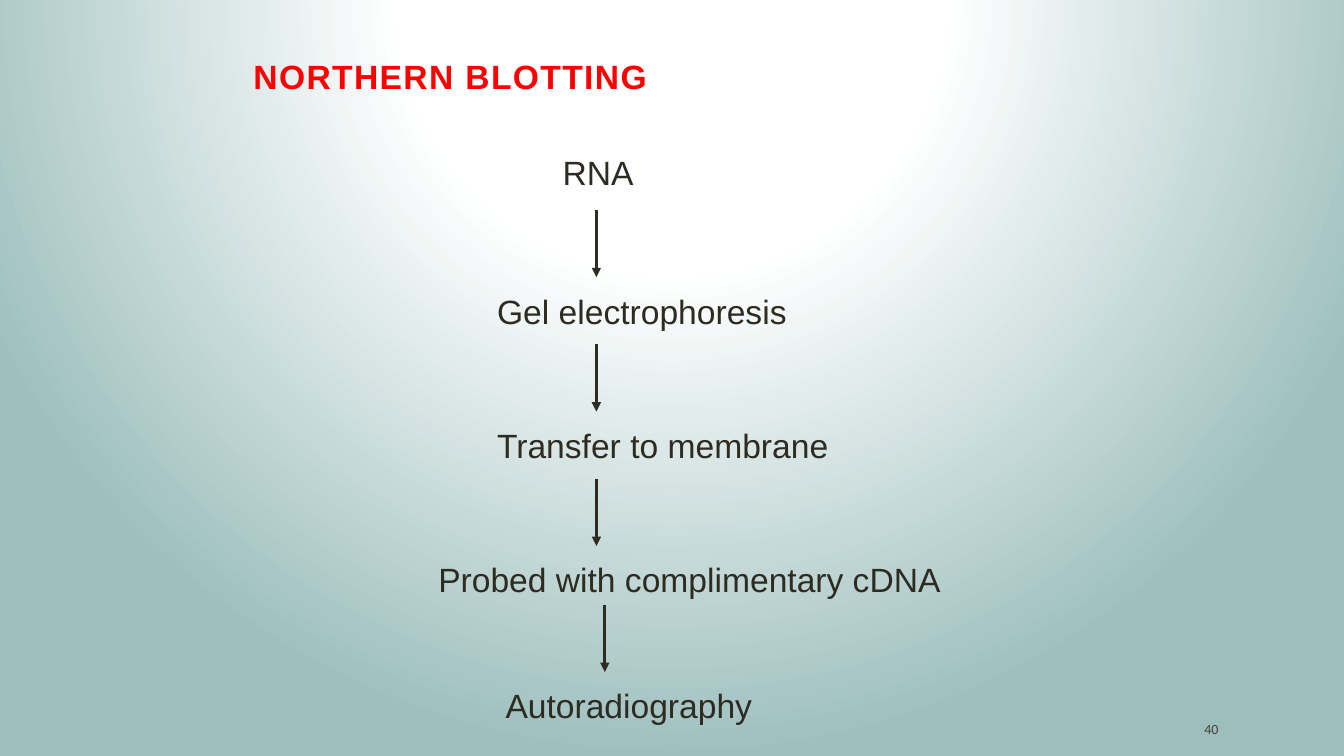
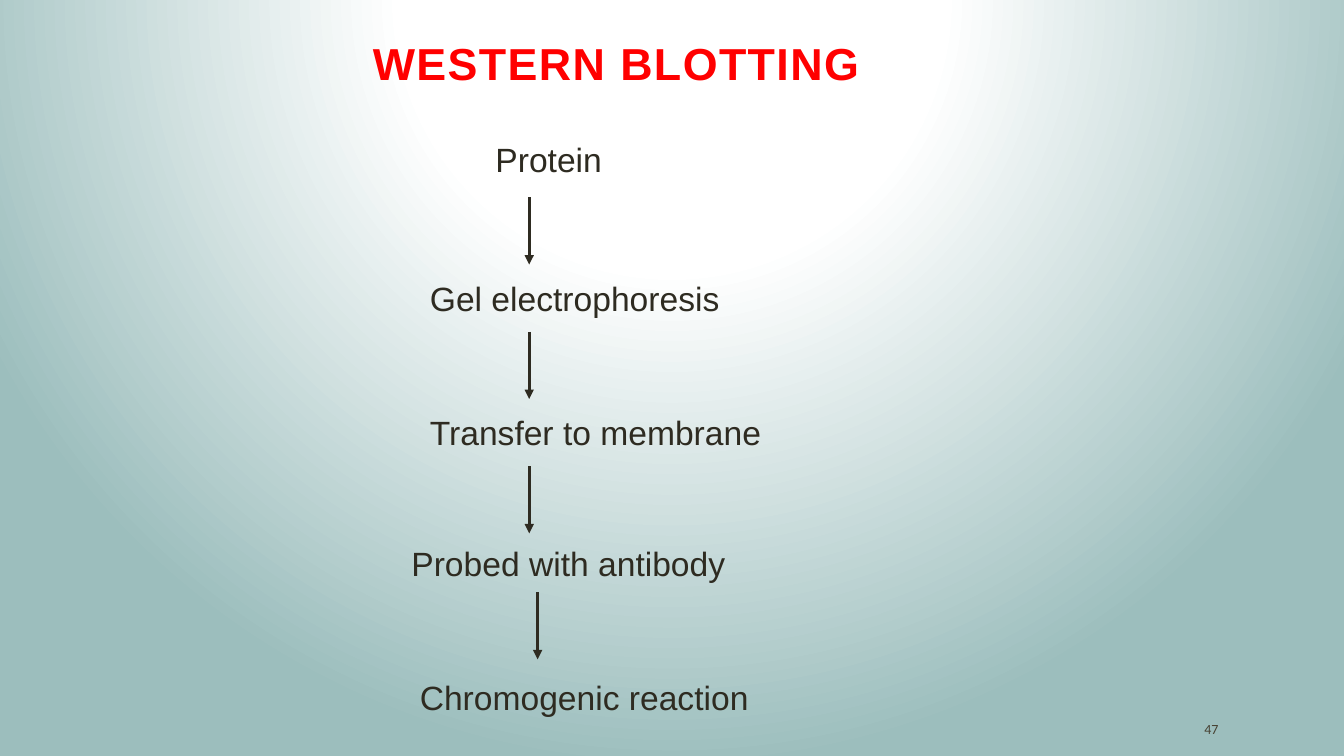
from lxml.etree import SubElement
from pptx import Presentation
from pptx.dml.color import RGBColor
from pptx.enum.shapes import MSO_CONNECTOR
from pptx.enum.text import MSO_ANCHOR
from pptx.oxml import parse_xml
from pptx.oxml.ns import nsdecls, qn
from pptx.util import Inches, Pt

# Grid: 160 columns by 90 rows of square cells
COLS, ROWS = 160, 90
CELL = Inches(7.5) // ROWS

RED = RGBColor(0xFF, 0x00, 0x00)
INK = RGBColor(0x2E, 0x2B, 0x21)
MUTED = RGBColor(0x47, 0x42, 0x33)
WHITE = RGBColor(0xFF, 0xFF, 0xFF)
TEAL = RGBColor(0x9C, 0xBE, 0xBD)

ARROW_ROWS = (25, 41, 57, 72)
ARROW_COL, ARROW_LENGTH = 71, 8
STEP_HEIGHT = 6


def cells(n):
    return round(n * CELL)


class Deck:
    """Holds the shared style and the current slide."""

    def __init__(self):
        self.prs = Presentation()
        self.prs.slide_width = cells(COLS)
        self.prs.slide_height = cells(ROWS)
        self.s = None
        self.background()

    def background(self):
        # Radial gradient on the master, centred above the slide
        master = self.prs.slide_master
        master.background.fill.gradient()
        old = master.element.xpath(".//p:bg//a:gradFill")[0]
        stops = "".join(
            f'<a:gs pos="{pos * 1000}"><a:srgbClr val="{color}"/></a:gs>'
            for pos, color in ((0, WHITE), (35, WHITE), (100, TEAL)))
        new = parse_xml(
            f'<a:gradFill {nsdecls("a")} rotWithShape="1">'
            f'<a:gsLst>{stops}</a:gsLst><a:path path="circle">'
            '<a:fillToRect l="50000" t="-80000" r="50000" b="180000"/>'
            '</a:path></a:gradFill>')
        old.getparent().replace(old, new)

    def new_slide(self):
        self.s = self.prs.slides.add_slide(self.prs.slide_layouts[6])

    def text(self, text, col, row, width, height, size, color,
             font="Arial", anchor=MSO_ANCHOR.TOP):
        sp = self.s.shapes.add_textbox(*map(cells, (col, row, width, height)))
        tf = sp.text_frame
        tf.word_wrap = True
        tf.vertical_anchor = anchor
        tf.text = text
        p = tf.paragraphs[0]
        r = p.runs[0]
        r.font.name = font
        r.font.size = Pt(size)
        r.font.color.rgb = color
        return p

    def title(self, text, col, row, size):
        p = self.text(text, col, row, 102, 15, size, RED,
                      anchor=MSO_ANCHOR.MIDDLE)
        p.line_spacing = 0.8
        r = p.runs[0]
        r.font.bold = True
        r.font.element.set("spc", "100") if hasattr(r.font, "element") \
            else p.runs[0]._r.get_or_add_rPr().set("spc", "100")

    def step(self, text, col, row, width):
        self.text(text, col, row, width, STEP_HEIGHT, 24, INK)

    def arrow(self, col, row):
        x, top, bottom = map(cells, (col, row, row + ARROW_LENGTH))
        sp = self.s.shapes.add_connector(
            MSO_CONNECTOR.STRAIGHT, x, top, x, bottom)
        sp.line.color.rgb = INK
        sp.line.width = Pt(2.25)
        SubElement(sp.line._get_or_add_ln(), qn("a:tailEnd"), type="triangle")
        SubElement(sp._element.spPr, qn("a:effectLst"))

    def flow(self, steps, dx=0, dy=0):
        for step in steps:
            self.step(*step)
        for row in ARROW_ROWS:
            # The last arrow stands one column further right
            nudge = 1 if row == ARROW_ROWS[-1] else 0
            self.arrow(ARROW_COL + nudge + dx, row + dy)

    def page_number(self, number):
        self.text(str(number), 142.2, 85, 12.7, 3.6, 10, MUTED,
                  font="Calibri", anchor=MSO_ANCHOR.MIDDLE)


def main():
    deck = Deck()

    # Northern blotting
    deck.new_slide()
    deck.title("NORTHERN BLOTTING", 29, 2, 24)
    deck.flow([
        ("RNA", 65.8, 17.5, 12),
        ("Gel electrophoresis", 58, 34, 39),
        ("Transfer to membrane", 58, 50, 47),
        ("Probed with complimentary cDNA", 51, 66, 67),
        ("Autoradiography", 59, 81, 39),
    ])
    deck.page_number(40)

    # Western blotting
    deck.new_slide()
    deck.title("WESTERN BLOTTING", 43.2, 0.6, 32)
    deck.flow([
        ("Protein", 57.8, 16, 16),
        ("Gel electrophoresis", 50, 32.5, 39),
        ("Transfer to membrane", 50, 48.5, 47),
        ("Probed with antibody", 47.8, 64, 67),
        ("Chromogenic reaction", 48.8, 80, 53),
    ], dx=-8, dy=-1.5)
    deck.page_number(47)

    deck.prs.save("out.pptx")


if __name__ == "__main__":
    main()
